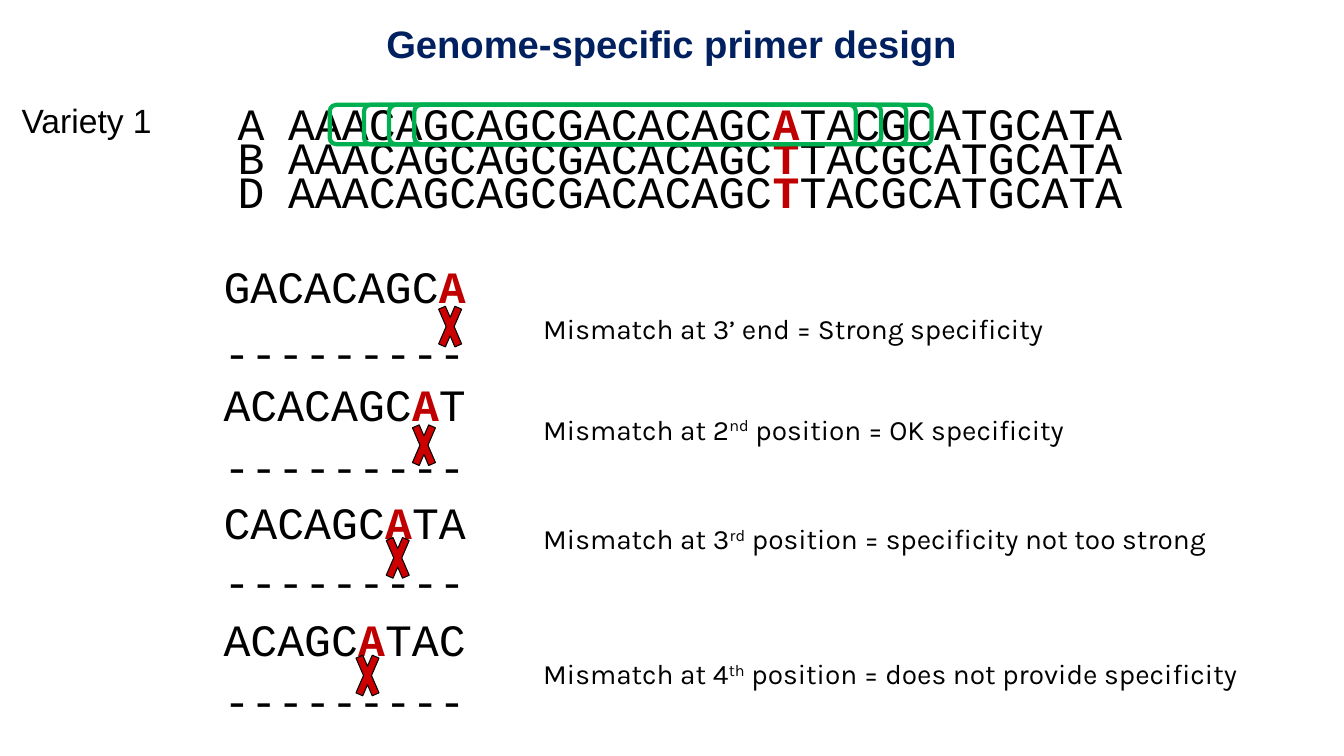
from pptx import Presentation
from pptx.dml.color import RGBColor
from pptx.enum.shapes import MSO_SHAPE
from pptx.enum.text import MSO_ANCHOR, PP_ALIGN
from pptx.util import Inches, Pt

BLACK = RGBColor(0, 0, 0)
NAVY = RGBColor(0x00, 0x20, 0x60)
RED = RGBColor(0xC0, 0x00, 0x00)
CROSS_RED = RGBColor(0xCC, 0x00, 0x00)
GREEN = RGBColor(0x00, 0xB0, 0x50)

WIDTH, HEIGHT = Inches(13.33), Inches(7.5)
COL, ROW = WIDTH / 100, HEIGHT / 100

BEFORE_SNP = "AAACAGCAGCGACACAGC"
AFTER_SNP = "TACGCATGCATA"
PRIMER_LENGTH = 9
GENOMES = [("A", "A"), ("B", "T"), ("D", "T")]
FRAMES = [(7.58, 39.15), (10.13, 38.48), (12, 38.48), (13.88, 38.48)]

# dash_dy, cross_dx, cross_dy, note_dy, note_w, position, ordinal, verdict
PRIMERS = [
    (8.67, 16.43, 4, 6.67, 42.7, "3’ end = Strong specificity", "", ""),
    (8.27, 14.48, 4.13, 4.4, 55.4, "2", "nd", " position = OK specificity"),
    (7.87, 12.53, 3.47, 3.33, 55.4, "3", "rd", " position = specificity not too strong"),
    (8, 10.28, 3.47, 5.6, 57.2, "4", "th", " position = does not provide specificity"),
]


def grid(x, y, w, h):
    return round(x * COL), round(y * ROW), round(w * COL), round(h * ROW)


def add_text(s, box, runs, font, size, spacing=0.9, before=6,
             align=PP_ALIGN.LEFT, anchor=MSO_ANCHOR.TOP):
    tf = s.shapes.add_textbox(*grid(*box)).text_frame
    tf.word_wrap = True
    tf.vertical_anchor = anchor
    p = tf.paragraphs[0]
    p.alignment = align
    p.line_spacing = spacing
    p.space_before = Pt(before)
    for text, color, bold, baseline in runs:
        r = p.add_run()
        r.text = text
        r.font.name = font
        r.font.size = Pt(size)
        r.font.bold = bold
        r.font.color.rgb = color
        if baseline:
            r.font._element.set("baseline", str(baseline))


def plain(text):
    return text, BLACK, False, 0


def add_sequence(s, box, before, snp, after):
    runs = [plain(before), (snp, RED, True, 0)]
    if after:
        runs.append(plain(after))
    add_text(s, box, runs, "Courier New", 32)


def add_outlined(s, kind, box, line, width, fill=None):
    sp = s.shapes.add_shape(kind, *grid(*box))
    sp.shadow.inherit = False
    sp.line.color.rgb = line
    sp.line.width = Pt(width)
    if fill is None:
        sp.fill.background()
    else:
        sp.fill.solid()
        sp.fill.fore_color.rgb = fill


def add_header(s, x, y, w, h):
    add_text(s, (x, y, w, h), [("Genome-specific primer design", NAVY, True, 0)],
             "Arial", 27.3, 0.8, 0, PP_ALIGN.CENTER, MSO_ANCHOR.MIDDLE)


def add_genomes(s, x, y, w):
    add_text(s, (0, y - 0.27, 12.9, 6.67), [plain("Variety 1")],
             "Arial", 24, 1, 0, PP_ALIGN.CENTER)
    for i, (genome, snp) in enumerate(GENOMES):
        add_sequence(s, (x, y + 4.53 * i, w, 8),
                     f"{genome}\t{BEFORE_SNP}", snp, AFTER_SNP)


def add_frames(s, x, y):
    for dx, w in FRAMES:
        add_outlined(s, MSO_SHAPE.ROUNDED_RECTANGLE,
                     (x + dx, y + 1.07, w, 5.2), GREEN, 3)


def add_primer(s, x, y, shift, primer):
    dash_dy, cross_dx, cross_dy, note_dy, note_w, position, ordinal, verdict = primer
    add_sequence(s, (x, y, 59.4, 8), BEFORE_SNP[shift + 1 - PRIMER_LENGTH:],
                 "A", AFTER_SNP[:shift])
    add_text(s, (x, y + dash_dy, 38.7, 8), [plain("-" * PRIMER_LENGTH)],
             "Courier New", 32)
    note = [plain("Mismatch at " + position)]
    if ordinal:
        note += [(ordinal, BLACK, False, 30000), plain(verdict)]
    add_text(s, (x + 23.78, y + note_dy, note_w, 5.33), note, "Karla", 20)
    add_outlined(s, MSO_SHAPE.MATH_MULTIPLY,
                 (x + cross_dx, y + cross_dy, 2.33, 9.6), BLACK, 0.75, CROSS_RED)


def main():
    prs = Presentation()
    prs.slide_width, prs.slide_height = WIDTH, HEIGHT
    s = prs.slides.add_slide(prs.slide_layouts[6])
    add_header(s, 17.63, 3.07, 64.65, 6.4)
    add_genomes(s, 16.95, 12.8, 74.18)
    for i, primer in enumerate(PRIMERS):
        add_primer(s, 15.9, 34.4 + 15.56 * i, i, primer)
    add_frames(s, 16.95, 12.8)
    prs.save("out.pptx")


if __name__ == "__main__":
    main()
